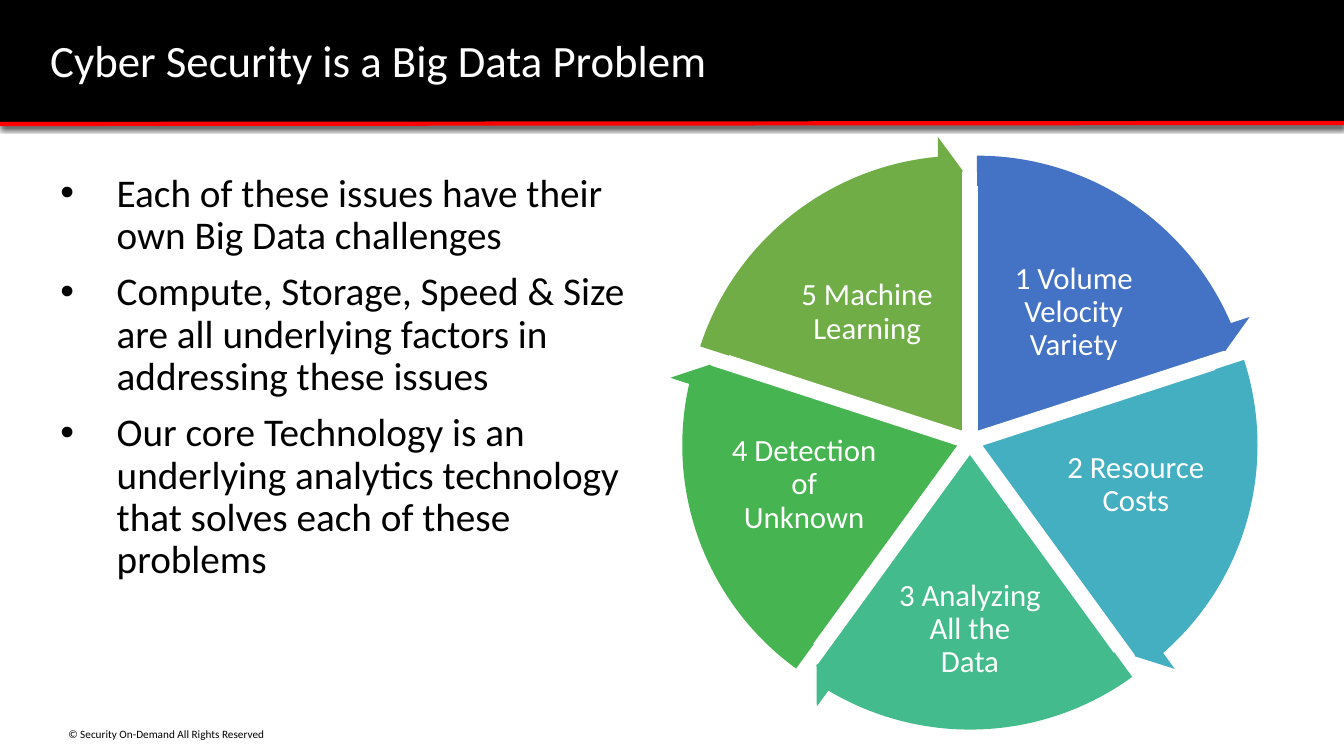
from dataclasses import dataclass
from math import cos, radians, sin

from lxml import etree
from pptx import Presentation
from pptx.dml.color import RGBColor
from pptx.enum.shapes import MSO_CONNECTOR, MSO_SHAPE
from pptx.enum.text import MSO_ANCHOR, PP_ALIGN
from pptx.oxml.ns import qn
from pptx.util import Inches, Pt


@dataclass(frozen=True)
class Theme:
    font: str = "Calibri"
    black: str = "000000"
    white: str = "FFFFFF"
    red: str = "FF0000"
    title: int = 32
    body: int = 28
    label: int = 22
    foot: int = 8


@dataclass(frozen=True)
class Box:
    left: float
    top: float
    width: float
    height: float

    def lengths(self) -> list:
        return [Inches(v) for v in (self.left, self.top, self.width, self.height)]


@dataclass(frozen=True)
class Slice:
    text: str
    color: str
    box: Box


THEME = Theme()
SLICES = [
    Slice("1 Volume Velocity Variety", "4472C4", Box(9.81, 2.54, 1.68, 1.12)),
    Slice("2 Resource Costs", "43AFC0", Box(10.49, 4.19, 1.55, 1.24)),
    Slice("3 Analyzing All the Data", "43BB8D", Box(8.88, 5.56, 1.48, 1.37)),
    Slice("4 Detection of Unknown", "45B451", Box(7.2, 4.19, 1.55, 1.24)),
    Slice("5 Machine Learning", "70AD47", Box(7.76, 2.54, 1.68, 1.12)),
]
POINTS = [
    "Each of these issues have their own Big Data challenges",
    "Compute, Storage, Speed & Size are all underlying factors in addressing these issues",
    "Our core Technology is an underlying analytics technology that solves each of these problems",
]
HUB_X, HUB_Y, GAP = 9.62, 4.38, 0.12
PIE_SIZE, ARROW_SIZE = 5.22, 5.87
# Shape adjustments count 0.6 per degree.
UNIT = 0.6
TURN = 360 * UNIT
HEAD = 3.28


def add_text(shapes, box: Box, lines: list, size: int, color: str,
             anchor=MSO_ANCHOR.TOP, align=PP_ALIGN.LEFT, spacing: float = 0.9):
    frame = shapes.add_textbox(*box.lengths()).text_frame
    frame.word_wrap = True
    frame.vertical_anchor = anchor
    frame.text = "\n".join(lines)
    for para in frame.paragraphs:
        para.alignment = align
        para.line_spacing = spacing
        for run in para.runs:
            run.font.name = THEME.font
            run.font.size = Pt(size)
            run.font.color.rgb = RGBColor.from_string(color)
    return frame


def add_solid(shapes, kind, box: Box, color: str, adjust: list, edge: str = ""):
    shape = shapes.add_shape(kind, *box.lengths())
    shape.shadow.inherit = False
    shape.fill.solid()
    shape.fill.fore_color.rgb = RGBColor.from_string(color)
    for i, value in enumerate(adjust):
        shape.adjustments[i] = value
    if edge:
        shape.line.color.rgb = RGBColor.from_string(edge)
        shape.line.width = Pt(1)
    else:
        shape.line.fill.background()


def add_rule(shapes) -> None:
    """Draw the red line under the banner with its soft drop shadow."""
    rule = shapes.add_connector(MSO_CONNECTOR.STRAIGHT, Inches(0), Inches(1.23),
                                Inches(13.33), Inches(1.22))
    rule.line.color.rgb = RGBColor.from_string(THEME.red)
    rule.line.width = Pt(3)
    effects = etree.SubElement(rule._element.spPr, qn("a:effectLst"))
    shade = etree.SubElement(effects, qn("a:outerShdw"), blurRad=str(Pt(4)),
                             dist=str(Pt(1)), dir="5400000", rotWithShape="0")
    etree.SubElement(shade, qn("a:srgbClr"), val=THEME.black)


def add_points(shapes) -> None:
    frame = add_text(shapes, Box(0.5, 1.67, 6.07, 5.58), POINTS, THEME.body, THEME.black)
    for i, para in enumerate(frame.paragraphs):
        para.space_before = Pt(10 if i else 0)
        props = para._p.get_or_add_pPr()
        props.set("marL", str(Inches(0.56)))
        props.set("indent", str(-Inches(0.56)))
        etree.SubElement(props, qn("a:buFont"), typeface="Arial")
        etree.SubElement(props, qn("a:buChar"), char="•")


def add_wheel(shapes) -> None:
    """Push each slice out from the hub, then lay the arrow rims on top."""
    wheel = shapes.add_group_shape().shapes
    step = 360 / len(SLICES)

    def place(i: int, size: float) -> Box:
        mid = radians(-90 + (i + 0.5) * step)
        return Box(HUB_X + GAP * cos(mid) - size / 2,
                   HUB_Y + GAP * sin(mid) - size / 2, size, size)

    def angles(i: int) -> tuple:
        return tuple((270 + k * step) * UNIT % TURN for k in (i, i + 1))

    for i, part in enumerate(SLICES):
        add_solid(wheel, MSO_SHAPE.PIE, place(i, PIE_SIZE), part.color,
                  angles(i), THEME.white)
        frame = add_text(wheel, part.box, [part.text], THEME.label, THEME.white,
                         MSO_ANCHOR.MIDDLE, PP_ALIGN.CENTER)
        frame.margin_left = frame.margin_right = Inches(0.03)
        frame.margin_top = frame.margin_bottom = Inches(0.03)
    for i, part in enumerate(SLICES):
        start, end = angles(i)
        add_solid(wheel, MSO_SHAPE.CIRCULAR_ARROW, place(i, ARROW_SIZE), part.color,
                  [0.051, HEAD, end - HEAD, start, 0.059])


def main() -> None:
    deck = Presentation()
    deck.slide_width, deck.slide_height = Inches(13.33), Inches(7.5)
    shapes = deck.slides.add_slide(deck.slide_layouts[6]).shapes
    add_text(shapes, Box(0.58, 7.17, 4.5, 0.15),
             ["© Security On-Demand All Rights Reserved"], THEME.foot, THEME.black, spacing=1.0)
    add_solid(shapes, MSO_SHAPE.ROUND_2_SAME_RECTANGLE, Box(0, 0, 13.33, 1.22),
              THEME.black, [0, 0])
    add_rule(shapes)
    add_points(shapes)
    add_text(shapes, Box(0.4, 0.33, 11.43, 0.58), ["Cyber Security is a Big Data Problem"],
             THEME.title, THEME.white, MSO_ANCHOR.MIDDLE)
    add_wheel(shapes)
    deck.save("out.pptx")


if __name__ == "__main__":
    main()
